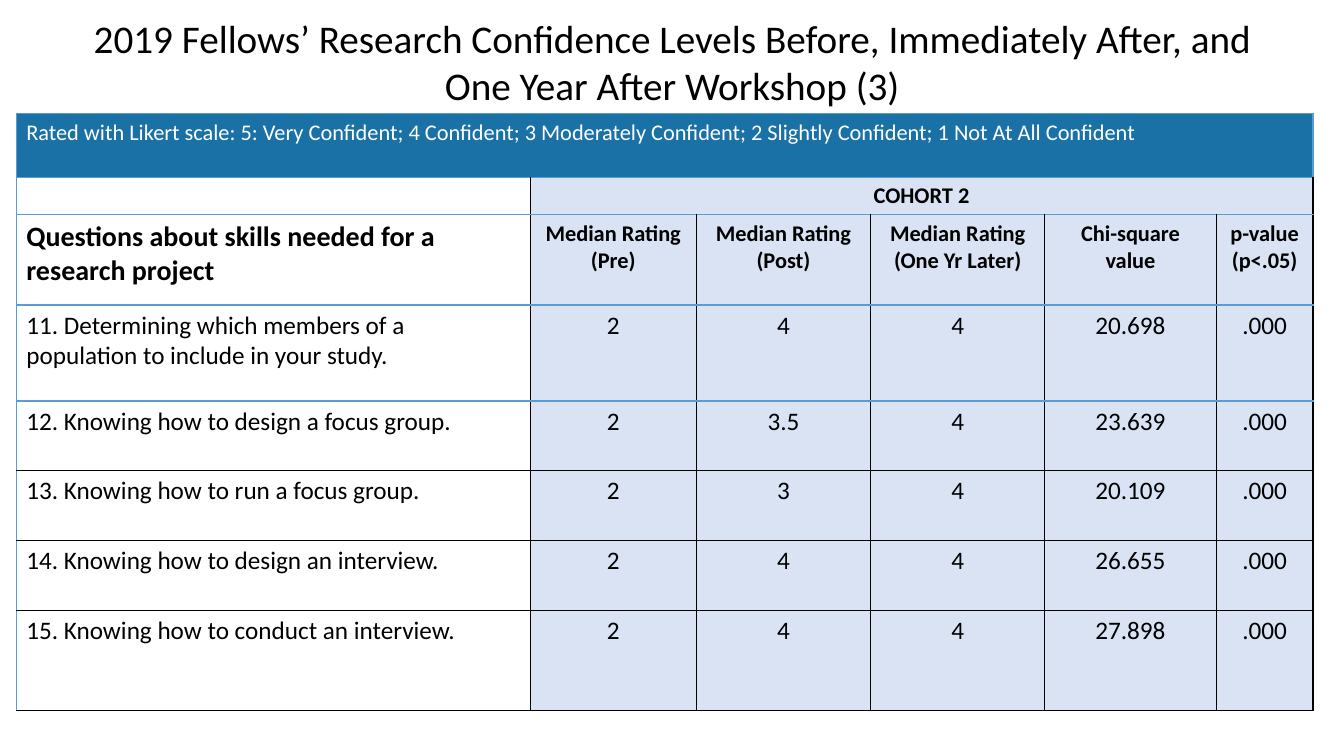
from pptx import Presentation
from pptx.dml.color import RGBColor as RGB
from pptx.enum.text import MSO_AUTO_SIZE as AUTO, PP_ALIGN as AL
from pptx.oxml.ns import qn
from pptx.util import Cm, Pt
from lxml.etree import SubElement

BLACK, WHITE, BLUE = "000000", "FFFFFF", "5B9BD5"
BANNER, PALE = "1A71A6", "DAE3F3"
COLS = [12.95, 4.19, 4.39, 4.39, 4.32, 2.44]
ROWS = [1.6, 0.92, 2.27, 2.42, 1.76, 1.76, 1.76, 2.52]
SCALE = ("Rated with Likert scale: 5: Very Confident; 4 Confident; "
         "3 Moderately Confident; 2 Slightly Confident; 1 Not At All Confident")
HEADINGS = ["Questions about skills needed for a research project",
            "Median Rating\n(Pre)", "Median Rating\n(Post)",
            "Median Rating\n(One Yr Later)", "Chi-square value",
            "p-value (p<.05)"]
RATINGS = [
    ["11. Determining which members of a population to include in your study.",
     "2", "4", "4", "20.698", ".000"],
    ["12. Knowing how to design a focus group.",
     "2", "3.5", "4", "23.639", ".000"],
    ["13. Knowing how to run a focus group.",
     "2", "3", "4", "20.109", ".000"],
    ["14. Knowing how to design an interview.",
     "2", "4", "4", "26.655", ".000"],
    ["15. Knowing how to conduct an interview.",
     "2", "4", "4", "27.898", ".000"],
]


def rgb(color):
    """Turn a hex string into a colour."""
    return RGB.from_string(color)


def write(tf, text, size=18, color=BLACK, bold=False, align=AL.LEFT):
    """Fill a text frame with one paragraph per line of text."""
    tf.text = text
    for p in tf.paragraphs:
        p.alignment = align
        for r in p.runs:
            r.font.name, r.font.size, r.font.bold = "Calibri", Pt(size), bold
            r.font.color.rgb = rgb(color)
        if not p.runs:
            SubElement(p._p, qn("a:endParaRPr"), sz=str(size * 100))


def add_border(cell, side, color):
    """Draw one side of a cell: L, R, T or B."""
    ln = SubElement(cell._tc.get_or_add_tcPr(), qn(f"a:ln{side}"),
                    w=str(Pt(1)))
    fill = SubElement(ln, qn("a:solidFill"))
    SubElement(fill, qn("a:srgbClr"), val=color)


def style_cell(cell, row, col):
    """Set the borders and fill that a cell's place calls for."""
    blue_sides = {"L": row == 0 or col == 0, "R": row == 0,
                  "T": row <= 4, "B": row <= 3}
    for side, is_blue in blue_sides.items():
        add_border(cell, side, BLUE if is_blue else BLACK)
    if row and not col:
        cell.fill.background()
    else:
        cell.fill.solid()
        cell.fill.fore_color.rgb = rgb(PALE if row else BANNER)


def text_format(row, col):
    """Return the text format for a place in the table."""
    if row == 0:
        return dict(size=16, color=WHITE)
    align = AL.CENTER if col else AL.LEFT
    if row > 2:
        return dict(align=align)
    size = 20 if (row, col) == (2, 0) else 16
    return dict(size=size, bold=True, align=align)


def add_title(s, text):
    """Add the centred title."""
    tf = s.shapes.add_textbox(Cm(0.81), Cm(0.23), Cm(32.26),
                              Cm(2.64)).text_frame
    tf.word_wrap = True
    tf.auto_size = AUTO.SHAPE_TO_FIT_TEXT
    write(tf, text, size=28, align=AL.CENTER)


def add_ratings(s):
    """Add the table of confidence ratings."""
    table = s.shapes.add_table(len(ROWS), len(COLS), Cm(0.41), Cm(2.87),
                               Cm(sum(COLS)), Cm(sum(ROWS))).table
    table.first_row = table.horz_banding = False
    for column, width in zip(table.columns, COLS):
        column.width = Cm(width)
    for row, height in zip(table.rows, ROWS):
        row.height = Cm(height)
    blanks = [""] * 4
    content = [[SCALE, "", *blanks], ["", "COHORT 2", *blanks],
               HEADINGS, *RATINGS]
    for i, texts in enumerate(content):
        for j, text in enumerate(texts):
            cell = table.cell(i, j)
            write(cell.text_frame, text, **text_format(i, j))
            style_cell(cell, i, j)
    for i in (0, 1):
        table.cell(i, i).merge(table.cell(i, len(COLS) - 1))


def main():
    """Build the slide."""
    prs = Presentation()
    prs.slide_width, prs.slide_height = Cm(33.87), Cm(19.05)
    s = prs.slides.add_slide(prs.slide_layouts[6])
    add_ratings(s)
    add_title(s, "2019 Fellows’ Research Confidence Levels Before, "
                 "Immediately After, and\vOne Year After Workshop (3)")
    prs.save("out.pptx")


if __name__ == "__main__":
    main()
